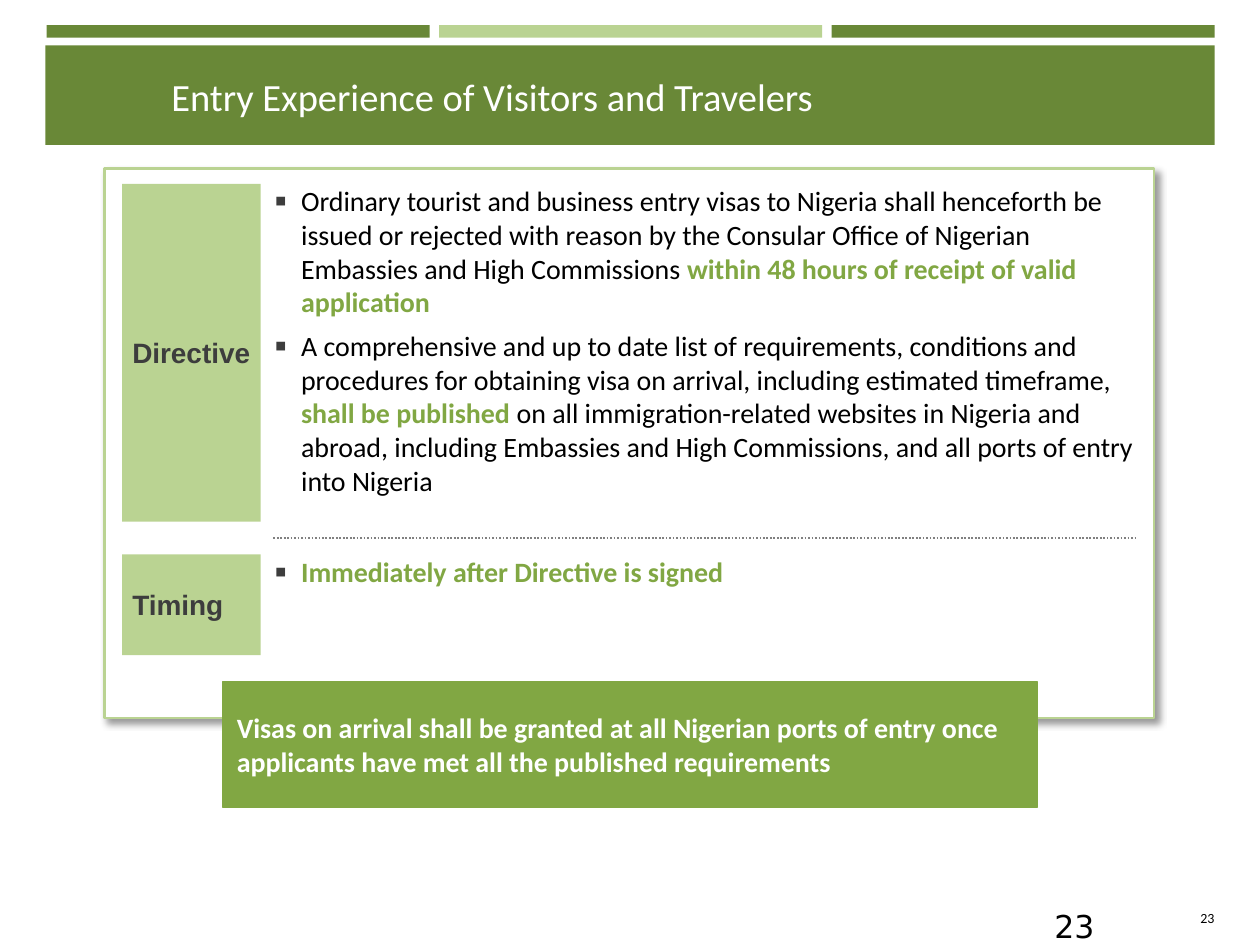
from dataclasses import dataclass

from lxml import etree
from pptx import Presentation
from pptx.dml.color import RGBColor
from pptx.enum.dml import MSO_LINE
from pptx.enum.shapes import MSO_CONNECTOR, MSO_SHAPE
from pptx.enum.text import MSO_ANCHOR, PP_ALIGN
from pptx.oxml.ns import qn
from pptx.util import Inches, Pt

RECTANGLE = MSO_SHAPE.RECTANGLE
STRAIGHT = MSO_CONNECTOR.STRAIGHT
DOTTED = MSO_LINE.ROUND_DOT
TOP, MIDDLE, BOTTOM = MSO_ANCHOR.TOP, MSO_ANCHOR.MIDDLE, MSO_ANCHOR.BOTTOM
LEFT, RIGHT = PP_ALIGN.LEFT, PP_ALIGN.RIGHT


@dataclass(frozen=True)
class Theme:
    dark_green: str = "698837"
    green: str = "81A743"
    light_green: str = "BAD392"
    white: str = "FFFFFF"
    black: str = "000000"
    charcoal: str = "3D3D3D"
    gray: str = "808080"
    body_font: str = "Calibri"
    label_font: str = "Arial"
    number_font: str = "DejaVu Sans"
    title_size: int = 22
    number_size: int = 18
    body_size: int = 16
    footer_size: int = 8


class SlideBuilder:
    def __init__(self, slide, theme):
        self.slide = slide
        self.theme = theme

    def rectangle(self, box, fill, line=None, line_width=1.0):
        shape = self.slide.shapes.add_shape(RECTANGLE, *map(Inches, box))
        shape.shadow.inherit = False
        shape.fill.solid()
        shape.fill.fore_color.rgb = RGBColor.from_string(fill)
        if line:
            shape.line.color.rgb = RGBColor.from_string(line)
            shape.line.width = Pt(line_width)
        else:
            shape.line.fill.background()
        return shape

    def panel(self, box):
        """Add the white card with a soft shadow to the lower right."""
        card = self.rectangle(box, self.theme.white, self.theme.light_green, 1.5)
        effects = card._element.spPr.find(qn("a:effectLst"))
        shadow = etree.SubElement(
            effects, qn("a:outerShdw"), blurRad=str(Pt(4)), dist=str(Pt(3)),
            dir="2700000", algn="tl", rotWithShape="0")
        color = etree.SubElement(shadow, qn("a:srgbClr"), val=self.theme.black)
        etree.SubElement(color, qn("a:alpha"), val="40000")

    def text_box(self, box):
        return self.slide.shapes.add_textbox(*map(Inches, box))

    def frame(self, shape, insets=(0, 0, 0, 0), anchor=TOP, wrap=True):
        frame = shape.text_frame
        frame.word_wrap = wrap
        frame.vertical_anchor = anchor
        (frame.margin_left, frame.margin_top,
         frame.margin_right, frame.margin_bottom) = map(Inches, insets)
        return frame

    def run(self, paragraph, text, size, color, font=None, bold=False):
        run = paragraph.add_run()
        run.text = text
        run.font.name = font or self.theme.body_font
        run.font.size = Pt(size)
        run.font.bold = bold
        run.font.color.rgb = RGBColor.from_string(color)

    def line_of_text(self, frame, text, size, color, font=None, bold=False, align=LEFT):
        paragraph = frame.paragraphs[0]
        paragraph.alignment = align
        self.run(paragraph, text, size, color, font, bold)

    def bullet(self, paragraph):
        properties = paragraph._p.get_or_add_pPr()
        properties.set("marL", str(Inches(0.22)))
        properties.set("indent", str(Inches(-0.21)))
        color = etree.SubElement(properties, qn("a:buClr"))
        etree.SubElement(color, qn("a:srgbClr"), val=self.theme.charcoal)
        etree.SubElement(properties, qn("a:buSzPct"), val="125000")
        etree.SubElement(properties, qn("a:buFont"), typeface=self.theme.label_font)
        etree.SubElement(properties, qn("a:buChar"), char="▪")

    def bullet_list(self, box, items):
        """Each item is a list of (text, emphasized) pairs."""
        frame = self.frame(self.text_box(box))
        for index, item in enumerate(items):
            paragraph = frame.add_paragraph() if index else frame.paragraphs[0]
            self.bullet(paragraph)
            paragraph.space_before = Pt(3 if index else 0)
            paragraph.space_after = Pt(3)
            for text, emphasized in item:
                color = self.theme.green if emphasized else self.theme.black
                self.run(paragraph, text, self.theme.body_size, color, bold=emphasized)

    def row_label(self, box, text):
        theme = self.theme
        label = self.rectangle(box, theme.light_green)
        frame = self.frame(label, (0.08, 0.08, 0.05, 0.08), MIDDLE)
        self.line_of_text(frame, text, theme.body_size, theme.charcoal,
                          theme.label_font, bold=True)

    def callout(self, box, text):
        theme = self.theme
        banner = self.rectangle(box, theme.green, theme.green, 0.75)
        frame = self.frame(banner, (0.11, 0.05, 0.11, 0.05), MIDDLE)
        self.line_of_text(frame, text, theme.body_size, theme.white, bold=True)

    def divider(self, left, right, y):
        ends = map(Inches, (left, y, right, y))
        connector = self.slide.shapes.add_connector(STRAIGHT, *ends)
        connector.line.color.rgb = RGBColor.from_string(self.theme.gray)
        connector.line.width = Pt(1)
        connector.line.dash_style = DOTTED
        etree.SubElement(connector._element.spPr, qn("a:effectLst"))

    def header(self, title):
        theme = self.theme
        self.rectangle((0.36, 0.36, 9.28, 0.79), theme.dark_green)
        strip_colors = (theme.dark_green, theme.light_green, theme.dark_green)
        for column, color in enumerate(strip_colors):
            self.rectangle((0.37 + column * 3.115, 0.2, 3.04, 0.1), color)
        frame = self.frame(self.text_box((1.36, 0.58, 8.25, 0.37)), anchor=BOTTOM)
        self.line_of_text(frame, title, theme.title_size, theme.white)

    def page_numbers(self, number):
        theme = self.theme
        corner = self.frame(self.text_box((9.5, 7.22, 0.14, 0.13)),
                            anchor=MIDDLE, wrap=False)
        self.line_of_text(corner, number, theme.footer_size, theme.black, align=RIGHT)
        large = self.frame(self.text_box((8.27, 7.15, 0.77, 0.4)), (0.1, 0.05, 0.1, 0.05))
        self.line_of_text(large, number, theme.number_size, theme.black, theme.number_font)


def main():
    presentation = Presentation()
    presentation.slide_width, presentation.slide_height = Inches(10), Inches(7.5)
    slide = presentation.slides.add_slide(presentation.slide_layouts[6])
    builder = SlideBuilder(slide, Theme())

    label_left, label_width = 0.97, 1.1
    content_left, content_width = 2.17, 6.86
    directive_top, timing_top = 1.46, 4.4

    builder.header("Entry Experience of Visitors and Travelers")
    builder.page_numbers("23")
    builder.panel((0.83, 1.34, 8.33, 4.36))
    builder.callout(
        (1.77, 5.41, 6.46, 1),
        "Visas on arrival shall be granted at all Nigerian ports of entry once "
        "applicants have met all the published requirements")

    builder.row_label((label_left, directive_top, label_width, 2.68), "Directive")
    builder.bullet_list((content_left, directive_top, content_width, 2.51), [
        [("Ordinary tourist and business entry visas to Nigeria shall henceforth be "
          "issued or rejected with reason by the Consular Office of Nigerian "
          "Embassies and High Commissions ", False),
         ("within 48 hours of receipt of valid application", True)],
        [("A comprehensive and up to date list of requirements, conditions and "
          "procedures for obtaining visa on arrival, including estimated timeframe, ", False),
         ("shall be published", True),
         (" on all immigration-related websites in Nigeria and abroad, including "
          "Embassies and High Commissions, and all ports of entry into Nigeria", False)],
    ])
    builder.divider(content_left, content_left + content_width, 4.27)
    builder.row_label((label_left, timing_top, label_width, 0.8), "Timing")
    builder.bullet_list((content_left, timing_top, content_width, 0.27),
                        [[("Immediately after Directive is signed", True)]])

    presentation.save("out.pptx")


if __name__ == "__main__":
    main()
